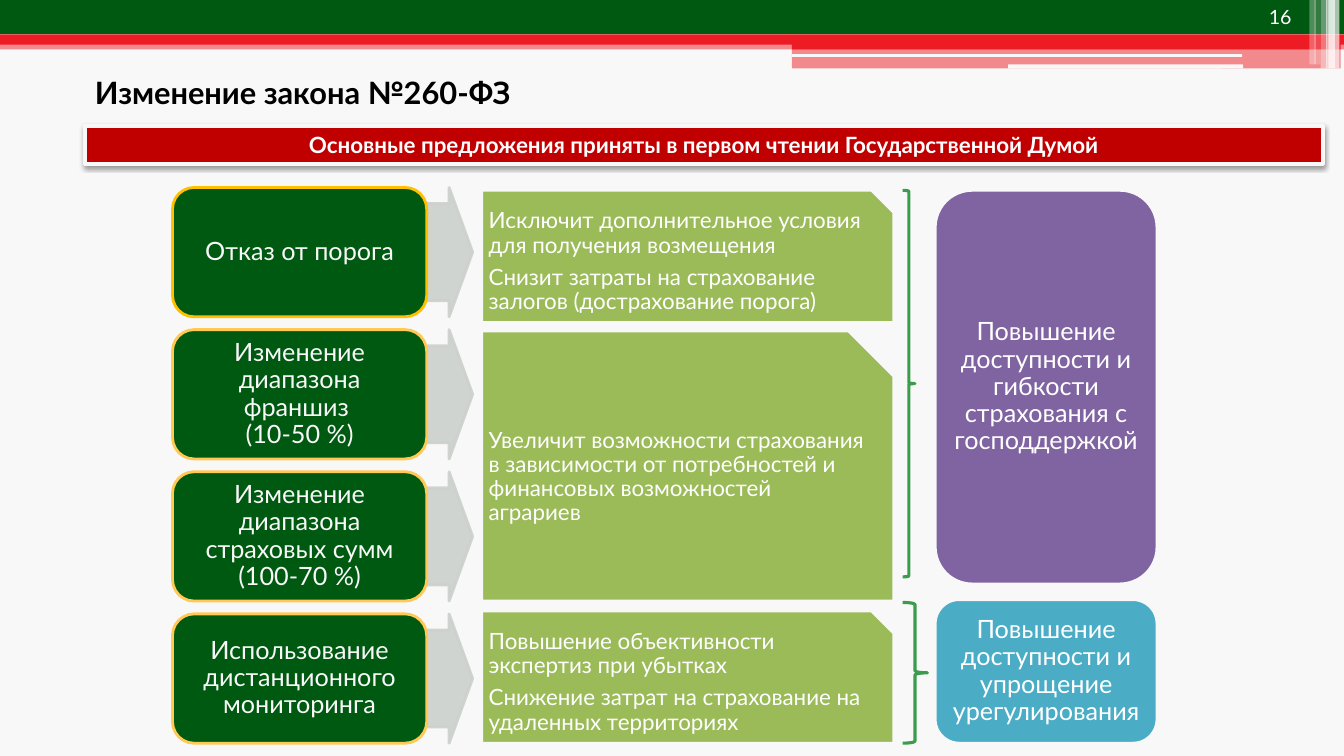
import dataclasses

import lxml.etree
import pptx
import pptx.dml.color
import pptx.enum.shapes
import pptx.enum.text
import pptx.oxml.ns
import pptx.util

RGBColor = pptx.dml.color.RGBColor
SHAPES = pptx.enum.shapes.MSO_SHAPE
ALIGN = pptx.enum.text.PP_ALIGN
ANCHOR = pptx.enum.text.MSO_ANCHOR
qn = pptx.oxml.ns.qn

PAPER = RGBColor(0xF8, 0xF8, 0xF8)
WHITE = RGBColor(0xFF, 0xFF, 0xFF)
BLACK = RGBColor(0x00, 0x00, 0x00)
DARK_GREEN = RGBColor(0x00, 0x59, 0x10)
BRIGHT_RED = RGBColor(0xED, 0x1C, 0x24)
DEEP_RED = RGBColor(0xC0, 0x00, 0x00)
GOLD = RGBColor(0xFF, 0xC0, 0x00)
PALE_GOLD = RGBColor(0xFF, 0xC9, 0x54)
GREY = RGBColor(0xCC, 0xD1, 0xCC)
OLIVE = RGBColor(0x9B, 0xBB, 0x59)
BRACE_GREEN = RGBColor(0x3B, 0x9C, 0x4C)
PURPLE = RGBColor(0x80, 0x64, 0xA2)
TEAL = RGBColor(0x4B, 0xAC, 0xC6)

FONT = "Lato"
WIDTH, HEIGHT = 13.33, 7.5
COLUMN = WIDTH / 12


@dataclasses.dataclass
class Grid:
    """A region of the page, measured in its own columns and rows."""
    top: float
    row: float

    def cell(self, left, top, width, height):
        """Return the position and size of a cell as lengths."""
        return [pptx.util.Inches(length) for length in (
            left * COLUMN, self.top + top * self.row,
            width * COLUMN, height * self.row)]


def set_alpha(color_format, percent):
    """Make a solid colour partly transparent."""
    solid = color_format._xPr.find(qn("a:solidFill"))
    alpha = lxml.etree.SubElement(solid[0], qn("a:alpha"))
    alpha.set("val", str(percent * 1000))


def add_box(page, kind, cell, fill=None, line=None, weight=2, alpha=100):
    """Add a preset shape with a flat fill and an optional outline."""
    box = page.shapes.add_shape(kind, *cell)
    box.shadow.inherit = False
    if fill is None:
        box.fill.background()
    else:
        box.fill.solid()
        box.fill.fore_color.rgb = fill
    if line is None:
        box.line.fill.background()
    else:
        box.line.color.rgb = line
        box.line.width = pptx.util.Pt(weight)
    if alpha < 100:
        set_alpha(box.fill, alpha)
        if line is not None:
            set_alpha(box.line.fill, alpha)
    return box


def write(box, paragraphs, size, color, align=ALIGN.LEFT, bold=False,
          anchor=ANCHOR.MIDDLE, margins=None, tight=True):
    """Fill a box with paragraphs, breaking lines at newlines."""
    frame = box.text_frame
    frame.word_wrap = True
    frame.vertical_anchor = anchor
    if margins:
        across, down = (pptx.util.Inches(margin) for margin in margins)
        frame.margin_left = frame.margin_right = across
        frame.margin_top = frame.margin_bottom = down
    for index, text in enumerate(paragraphs):
        para = frame.paragraphs[0] if index == 0 else frame.add_paragraph()
        para.alignment = align
        if tight:
            para.line_spacing = 0.9
            para.space_after = pptx.util.Pt(size * 0.35)
        for number, words in enumerate(text.split("\n")):
            if number:
                para.add_line_break()
            span = para.add_run()
            span.text = words
            span.font.name = FONT
            span.font.size = pptx.util.Pt(size)
            span.font.bold = bold
            span.font.color.rgb = color


def add_header(page, grid):
    """Draw the coloured bands, the light slivers and the page number."""
    bar, rounded = SHAPES.RECTANGLE, SHAPES.ROUNDED_RECTANGLE
    bands = [
        (bar, 0, 0.59, 12, 0.13, BRIGHT_RED, 50),
        (bar, 0, 0, 12, 0.5, DARK_GREEN, 100),
        (bar, 0, 0.5, 12, 0.15, BRIGHT_RED, 100),
        (bar, 7.07, 0.57, 4.9, 0.15, BRIGHT_RED, 100),
        (bar, 7.07, 0.71, 4.9, 0.29, BRIGHT_RED, 50),
        (rounded, 7.07, 0.79, 4.02, 0.04, PAPER, 100),
        (rounded, 9, 0.94, 2.1, 0.06, PAPER, 100)]
    slivers = [(11.9, 1, 65), (11.86, 1, 65), (11.84, 1, 60),
               (11.79, 1, 40), (11.73, 0.94, 20), (11.69, 0.94, 30)]
    bands += [(bar, left, 0, 0.06, height, WHITE, alpha)
              for left, height, alpha in slivers]
    for kind, left, top, width, height, color, alpha in bands:
        add_box(page, kind, grid.cell(left, top, width, height), color, alpha=alpha)
    number = page.shapes.add_textbox(*grid.cell(11.24, 0, 0.61, 0.41))
    write(number, ["16"], 14, WHITE, anchor=ANCHOR.TOP, tight=False)


def add_heading(page, grid):
    """Place the title and the red banner with its soft shadow."""
    title = page.shapes.add_textbox(*grid.cell(0.76, 0, 10.99, 1))
    write(title, ["Изменение закона №260-ФЗ"], 22, BLACK, bold=True,
          anchor=ANCHOR.TOP, tight=False)
    banner = add_box(page, SHAPES.RECTANGLE, grid.cell(0.76, 0.83, 11.05, 0.54),
                     DEEP_RED, PAPER, 3)
    effects = banner._element.spPr.find(qn("a:effectLst"))
    shadow = lxml.etree.SubElement(effects, qn("a:outerShdw"), blurRad="40000",
                                   dist="20000", dir="5400000", rotWithShape="0")
    color = lxml.etree.SubElement(shadow, qn("a:srgbClr"), val="000000")
    lxml.etree.SubElement(color, qn("a:alpha"), val="38000")
    write(banner, ["Основные предложения приняты в первом чтении Государственной Думой"],
          16, WHITE, ALIGN.CENTER, bold=True, tight=False)


def add_changes(page, grid):
    """Stack the green cards, each with an arrow to its right."""
    changes = ["Отказ от порога",
               "Изменение диапазона франшиз \n(10-50 %)",
               "Изменение диапазона страховых сумм (100-70 %)",
               "Использование дистанционного мониторинга"]
    for row, text in enumerate(changes):
        arrow = add_box(page, SHAPES.RIGHT_ARROW, grid.cell(3.8, row, 0.42, 0.91),
                        GREY, GREY, alpha=90)
        arrow.adjustments[0] = 0.75
        card = add_box(page, SHAPES.ROUNDED_RECTANGLE, grid.cell(1.54, row, 2.27, 0.91),
                       DARK_GREEN, PALE_GOLD if row else GOLD)
        write(card, [text], 18, PAPER, ALIGN.CENTER, margins=(0.07, 0.04))


def add_effects(page, grid):
    """Place the olive panels that explain the changes."""
    effects = [
        (0.02, 0.93, ["Исключит дополнительное условия для получения возмещения",
                      "Снизит затраты на страхование залогов (дострахование порога)"]),
        (1.01, 1.9, ["Увеличит возможности страхования в зависимости от потребностей "
                     "и финансовых возможностей аграриев"]),
        (2.98, 0.93, ["Повышение объективности экспертиз при убытках",
                      "Снижение затрат на страхование на удаленных территориях"])]
    for top, height, paragraphs in effects:
        panel = add_box(page, SHAPES.SNIP_1_RECTANGLE,
                        grid.cell(4.3, top, 3.68, height), OLIVE, PAPER)
        write(panel, paragraphs, 16, WHITE, margins=(0.07, 0.07))


def add_outcomes(page, grid):
    """Gather the panels with braces into the two outcomes."""
    for top, width, height in [(0.02, 0.11, 2.72), (2.92, 0.22, 0.99)]:
        add_box(page, SHAPES.RIGHT_BRACE, grid.cell(8.06, top, width, height),
                line=BRACE_GREEN, weight=2.25)
    outcomes = [
        (0.02, 2.77, PURPLE, "Повышение доступности и гибкости страхования с господдержкой"),
        (2.9, 1.01, TEAL, "Повышение доступности и упрощение урегулирования")]
    for top, height, color, text in outcomes:
        outcome = add_box(page, SHAPES.ROUNDED_RECTANGLE,
                          grid.cell(8.35, top, 1.98, height), color, PAPER)
        write(outcome, [text], 18, WHITE, ALIGN.CENTER, margins=(0.02, 0.04))


def main():
    """Build the slide and save the deck."""
    deck = pptx.Presentation()
    deck.slide_width = pptx.util.Inches(WIDTH)
    deck.slide_height = pptx.util.Inches(HEIGHT)
    page = deck.slides.add_slide(deck.slide_layouts[6])
    page.background.fill.solid()
    page.background.fill.fore_color.rgb = PAPER
    body = Grid(1.86, 1.41)
    add_header(page, Grid(0, 0.68))
    add_heading(page, Grid(0.68, 0.69))
    add_changes(page, body)
    add_effects(page, body)
    add_outcomes(page, body)
    deck.save("out.pptx")


if __name__ == "__main__":
    main()
